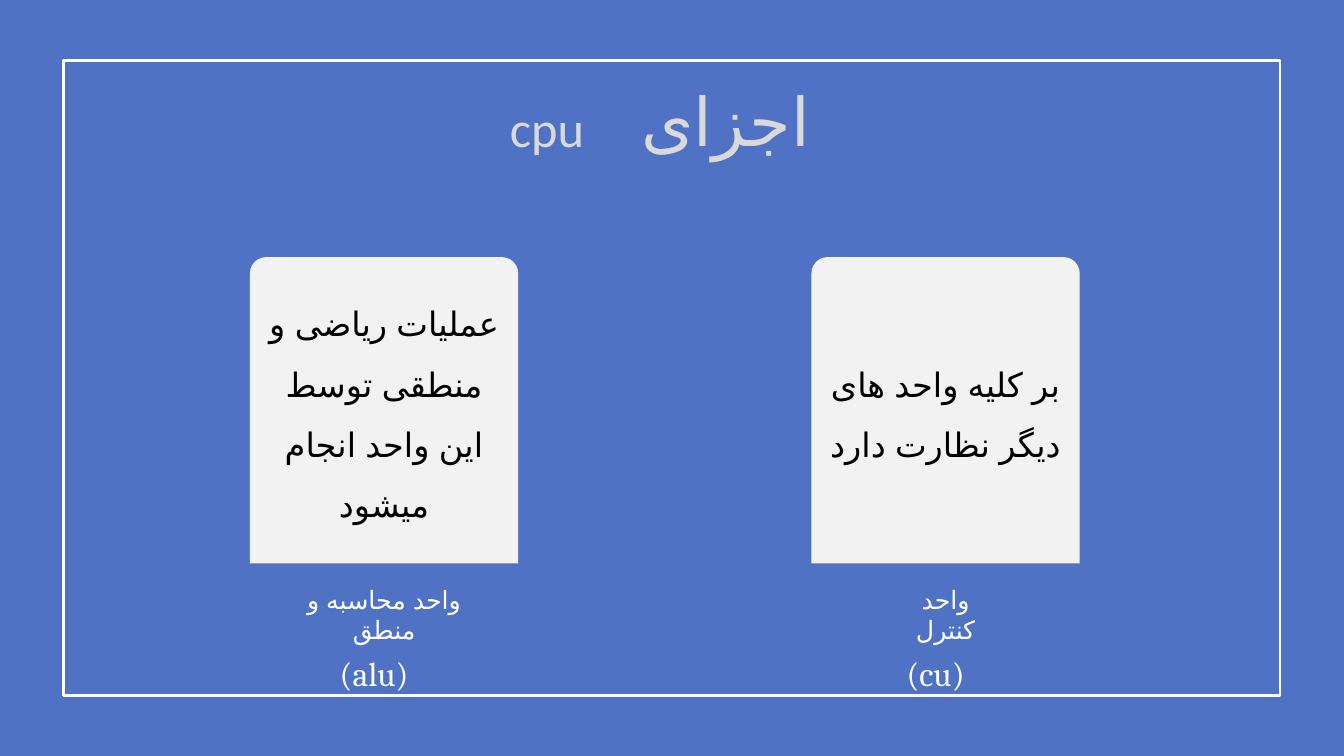
from dataclasses import dataclass

from pptx import Presentation
from pptx.dml.color import RGBColor
from pptx.enum.lang import MSO_LANGUAGE_ID
from pptx.enum.shapes import MSO_SHAPE
from pptx.enum.text import MSO_ANCHOR, PP_ALIGN
from pptx.oxml.ns import qn
from pptx.util import Cm, Pt

FRAME_SHAPE = MSO_SHAPE.RECTANGLE
CARD_SHAPE = MSO_SHAPE.ROUND_2_SAME_RECTANGLE
MIDDLE, TOP = MSO_ANCHOR.MIDDLE, MSO_ANCHOR.TOP
CENTER, LEFT = PP_ALIGN.CENTER, PP_ALIGN.LEFT
PERSIAN = MSO_LANGUAGE_ID.FARSI


@dataclass(frozen=True)
class Theme:
    background: RGBColor = RGBColor(0x50, 0x72, 0xC4)
    white: RGBColor = RGBColor(0xFF, 0xFF, 0xFF)
    heading: RGBColor = RGBColor(0xD9, 0xD9, 0xD9)
    card: RGBColor = RGBColor(0xF2, 0xF2, 0xF2)
    body: RGBColor = RGBColor(0, 0, 0)
    persian_font: str = "Arial"
    heading_font: str = "Calibri"
    short_name_font: str = "Cambria"
    title_size: int = 48
    subtitle_size: int = 36
    body_size: int = 24
    label_size: int = 18


THEME = Theme()


@dataclass(frozen=True)
class Box:
    """A rectangle in centimetres."""
    left: float
    top: float
    width: float
    height: float

    @property
    def lengths(self):
        return Cm(self.left), Cm(self.top), Cm(self.width), Cm(self.height)


@dataclass(frozen=True)
class Unit:
    left: float
    task: str
    name: str
    short_name: str
    label_width: float


UNITS = (
    Unit(6.3, "عملیات ریاضی و منطقی توسط این واحد انجام میشود",
         "واحد محاسبه و منطق", "(alu)", 5.36),
    Unit(20.45, "بر کلیه واحد های دیگر نظارت دارد",
         "واحد کنترل", "(cu)", 3.18),
)
CARD_WIDTH = 6.76
CARD_TOP, CARD_HEIGHT = 6.48, 7.72
LABEL_TOP, LABEL_HEIGHT = 14.6, 2.26


def write(para, text, size, color, font, align=CENTER, rtl=False):
    para.text = text
    para.alignment = align
    if rtl:
        para._p.get_or_add_pPr().set("rtl", "1")
    span = para.runs[0]
    span.font.size = Pt(size)
    span.font.color.rgb = color
    span.font.name = font
    if rtl:
        span.font.language_id = PERSIAN
        properties = span._r.get_or_add_rPr()
        script_font = properties.makeelement(qn("a:cs"), {"typeface": font})
        properties.append(script_font)


def add_text_frame(page, box, anchor):
    frame = page.shapes.add_textbox(*box.lengths).text_frame
    frame.word_wrap = True
    frame.vertical_anchor = anchor
    return frame


def add_frame(page, box):
    border = page.shapes.add_shape(FRAME_SHAPE, *box.lengths)
    border.shadow.inherit = False
    border.fill.background()
    border.line.color.rgb = THEME.white
    border.line.width = Pt(2)


def add_heading(page, box):
    short_box = Box(box.left, box.top + 0.36, 3.05, 1.8)
    short_frame = add_text_frame(page, short_box, TOP)
    write(short_frame.paragraphs[0], "cpu", THEME.subtitle_size,
          THEME.heading, THEME.heading_font, LEFT)
    title_left = box.left + 2.0
    title_box = Box(title_left, box.top, box.width - 2.0, box.height)
    title_frame = add_text_frame(page, title_box, MIDDLE)
    write(title_frame.paragraphs[0], "اجزای", THEME.title_size,
          THEME.heading, THEME.persian_font, rtl=True)


def add_card(page, box, task):
    card = page.shapes.add_shape(CARD_SHAPE, *box.lengths)
    card.adjustments[0] = 0.06
    card.adjustments[1] = 0
    card.shadow.inherit = False
    card.fill.solid()
    card.fill.fore_color.rgb = THEME.card
    card.line.fill.background()
    frame = card.text_frame
    frame.word_wrap = True
    frame.vertical_anchor = MIDDLE
    frame.margin_top, frame.margin_bottom = Cm(0.06), Cm(0.51)
    para = frame.paragraphs[0]
    write(para, task, THEME.body_size, THEME.body, THEME.persian_font, rtl=True)
    para.line_spacing = 1.5


def add_label(page, box, name, short_name):
    frame = add_text_frame(page, box, TOP)
    name_para = frame.paragraphs[0]
    write(name_para, name, THEME.label_size, THEME.white,
          THEME.persian_font, rtl=True)
    short_para = frame.add_paragraph()
    write(short_para, short_name, THEME.body_size, THEME.white,
          THEME.short_name_font)
    short_para._p.get_or_add_pPr().set("marR", str(Cm(0.5)))
    for para in frame.paragraphs:
        para.space_before = Pt(6)


def add_unit(page, box, unit):
    """Place a unit's card with its label centred below."""
    add_card(page, box, unit.task)
    label_left = box.left + (box.width - unit.label_width) / 2
    label_box = Box(label_left, LABEL_TOP, unit.label_width, LABEL_HEIGHT)
    add_label(page, label_box, unit.name, unit.short_name)


def main():
    deck = Presentation()
    deck.slide_width, deck.slide_height = Cm(33.87), Cm(19.05)
    page = deck.slides.add_slide(deck.slide_layouts[6])
    page.background.fill.solid()
    page.background.fill.fore_color.rgb = THEME.background
    add_frame(page, Box(1.6, 1.52, 30.66, 16))
    add_heading(page, Box(12.6, 1.96, 9.37, 2.13))
    for unit in UNITS:
        add_unit(page, Box(unit.left, CARD_TOP, CARD_WIDTH, CARD_HEIGHT), unit)
    deck.save("out.pptx")


if __name__ == "__main__":
    main()
